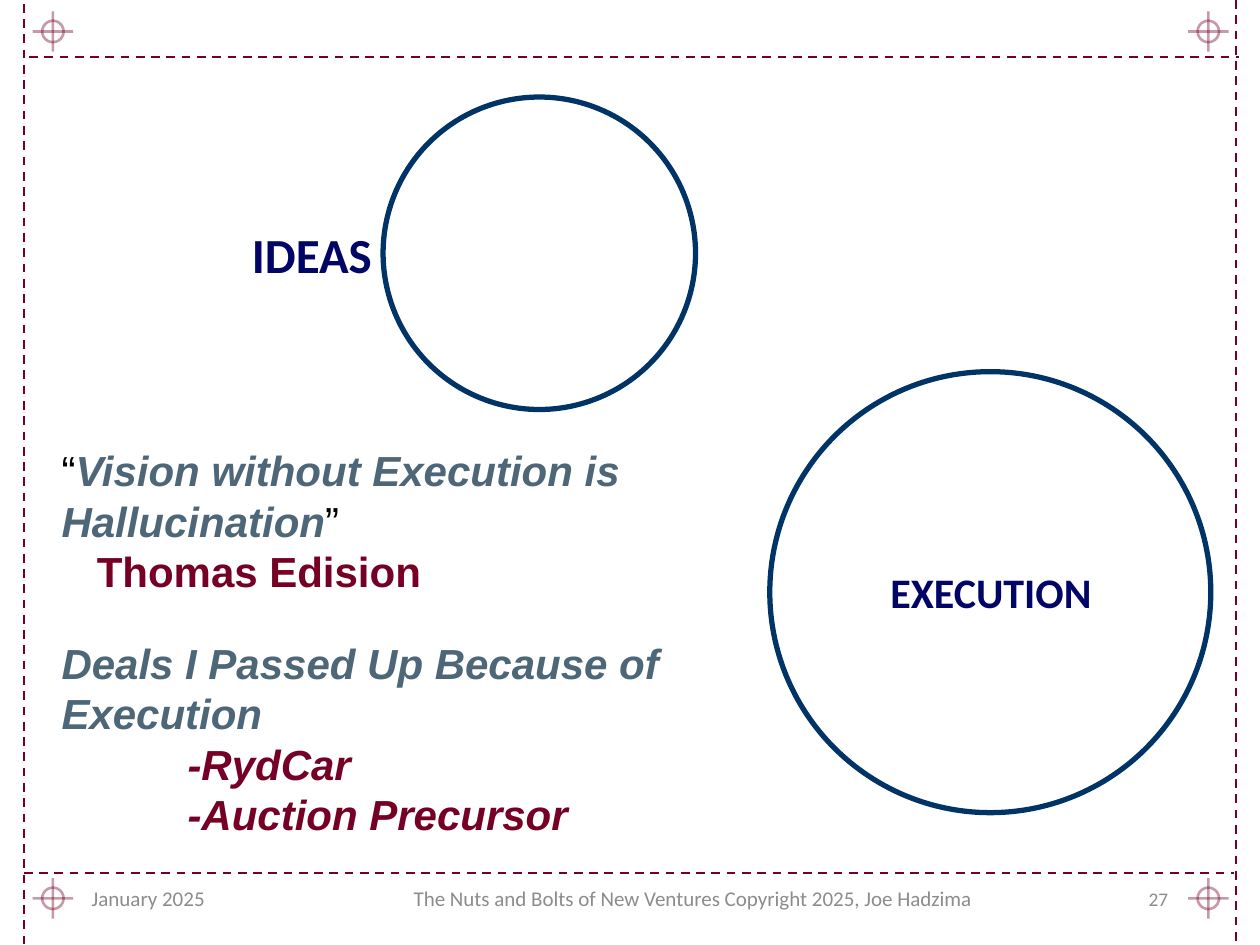
from itertools import product
from lxml.etree import SubElement
from pptx import Presentation
from pptx.dml.color import RGBColor
from pptx.enum.dml import MSO_LINE
from pptx.enum.shapes import MSO_CONNECTOR, MSO_SHAPE
from pptx.enum.text import MSO_ANCHOR, PP_ALIGN as Align
from pptx.oxml.ns import qn
from pptx.util import Inches, Pt

THEME = {
    "maroon": "760025", "navy": "003366", "label": "000566",
    "slate": "4D6778", "black": "000000", "gray": "8C8C8C",
    "sans": "Calibri", "body": "Arial",
    "frame": 1.25, "mark": 1.5, "ring": 3,
    "ideas": 28, "text": 24, "footer": 12, "number": 11,
}

FRAME_LINES = [
    (0.19, 0.03, 0.19, 7.5),
    (0.23, 0.45, 9.83, 0.45),
    (9.81, 0, 9.81, 7.5),
    (0.19, 6.93, 9.79, 6.93),
]
MARK_COLUMNS, MARK_ROWS = (0.42, 9.59), (0.25, 7.13)
MARK_RING, MARK_ARM = 0.085, 0.16

RINGS = [(3.04, 0.77, 2.48), (6.11, 2.95, 3.5)]
LABELS = [
    ("IDEAS", (1.51, 1.73, 1.54, 0.57), "ideas", Align.RIGHT),
    ("EXECUTION", (6.78, 4.45, 2.17, 0.5), "text", Align.CENTER),
]
FOOTERS = [
    ("January 2025", (0.63, 6.93, 2.33, 0.4), "footer", Align.LEFT),
    ("The Nuts and Bolts of New Ventures Copyright 2025, Joe Hadzima",
     (2, 6.93, 7, 0.4), "footer", Align.CENTER),
    ("27", (7.04, 6.93, 2.33, 0.4), "number", Align.RIGHT),
]
QUOTES = [
    ((0.39, 3.48, 6.2, 1.31), [
        (0, [("“", "black", False, False),
             ("Vision without Execution is Hallucination", "slate", True, True),
             ("”", "black", False, False)]),
        (0.28, [("Thomas Edision", "maroon", True, False)]),
    ]),
    ((0.39, 5.01, 6.2, 1.72), [
        (0, [("Deals I Passed Up Because of Execution", "slate", True, True)]),
        (1, [("-RydCar", "maroon", True, True)]),
        (1, [("-Auction Precursor", "maroon", True, True)]),
    ]),
]


def color(name):
    return RGBColor.from_string(THEME[name])


def style_line(shape, color_name, width, opacity=None):
    shape.line.color.rgb = color(color_name)
    shape.line.width = Pt(THEME[width])
    if opacity:
        tint = shape.line.fill._xPr.find(".//" + qn("a:srgbClr"))
        SubElement(tint, qn("a:alpha"), val=str(opacity * 1000))


def add_line(shapes, ends, width, opacity=None):
    line = shapes.add_connector(MSO_CONNECTOR.STRAIGHT, *map(Inches, ends))
    style_line(line, "maroon", width, opacity)
    SubElement(line._element.spPr, qn("a:effectLst"))
    return line


def add_ring(shapes, left, top, size, color_name, width, opacity=None):
    ring = shapes.add_shape(MSO_SHAPE.OVAL, *map(Inches, (left, top, size, size)))
    ring.shadow.inherit = False
    ring.fill.background()
    style_line(ring, color_name, width, opacity)


def add_mark(slide, x, y):
    shapes = slide.shapes.add_group_shape().shapes
    add_ring(shapes, x - MARK_RING, y - MARK_RING, 2 * MARK_RING, "maroon", "mark", 40)
    add_line(shapes, (x, y - MARK_ARM, x, y + MARK_ARM), "mark", 40)
    add_line(shapes, (x - MARK_ARM, y, x + MARK_ARM, y), "mark", 40)


def add_text(slide, area, paragraphs, font, size, align=Align.LEFT, anchor=MSO_ANCHOR.TOP):
    frame = slide.shapes.add_textbox(*map(Inches, area)).text_frame
    frame.word_wrap = True
    frame.vertical_anchor = anchor
    for index, (indent, spans) in enumerate(paragraphs):
        para = frame.add_paragraph() if index else frame.paragraphs[0]
        para.alignment = align
        if indent:
            para._p.get_or_add_pPr().set("marL", str(Inches(indent)))
        for words, color_name, bold, italic in spans:
            span = para.add_run()
            span.text = words
            span.font.name = THEME[font]
            span.font.size = Pt(THEME[size])
            span.font.bold = bold
            span.font.italic = italic
            span.font.color.rgb = color(color_name)


def main():
    deck = Presentation()
    deck.slide_width, deck.slide_height = Inches(10), Inches(7.5)
    slide = deck.slides.add_slide(deck.slide_layouts[6])

    for ends in FRAME_LINES:
        add_line(slide.shapes, ends, "frame").line.dash_style = MSO_LINE.DASH
    for y, x in product(MARK_ROWS, MARK_COLUMNS):
        add_mark(slide, x, y)
    for words, area, size, align in FOOTERS:
        add_text(slide, area, [(0, [(words, "gray", False, False)])],
                 "sans", size, align, MSO_ANCHOR.MIDDLE)
    for left, top, size in RINGS:
        add_ring(slide.shapes, left, top, size, "navy", "ring")
    for words, area, size, align in LABELS:
        add_text(slide, area, [(0, [(words, "label", True, False)])], "sans", size, align)
    for area, paragraphs in QUOTES:
        add_text(slide, area, paragraphs, "body", "text")

    deck.save("out.pptx")


if __name__ == "__main__":
    main()
